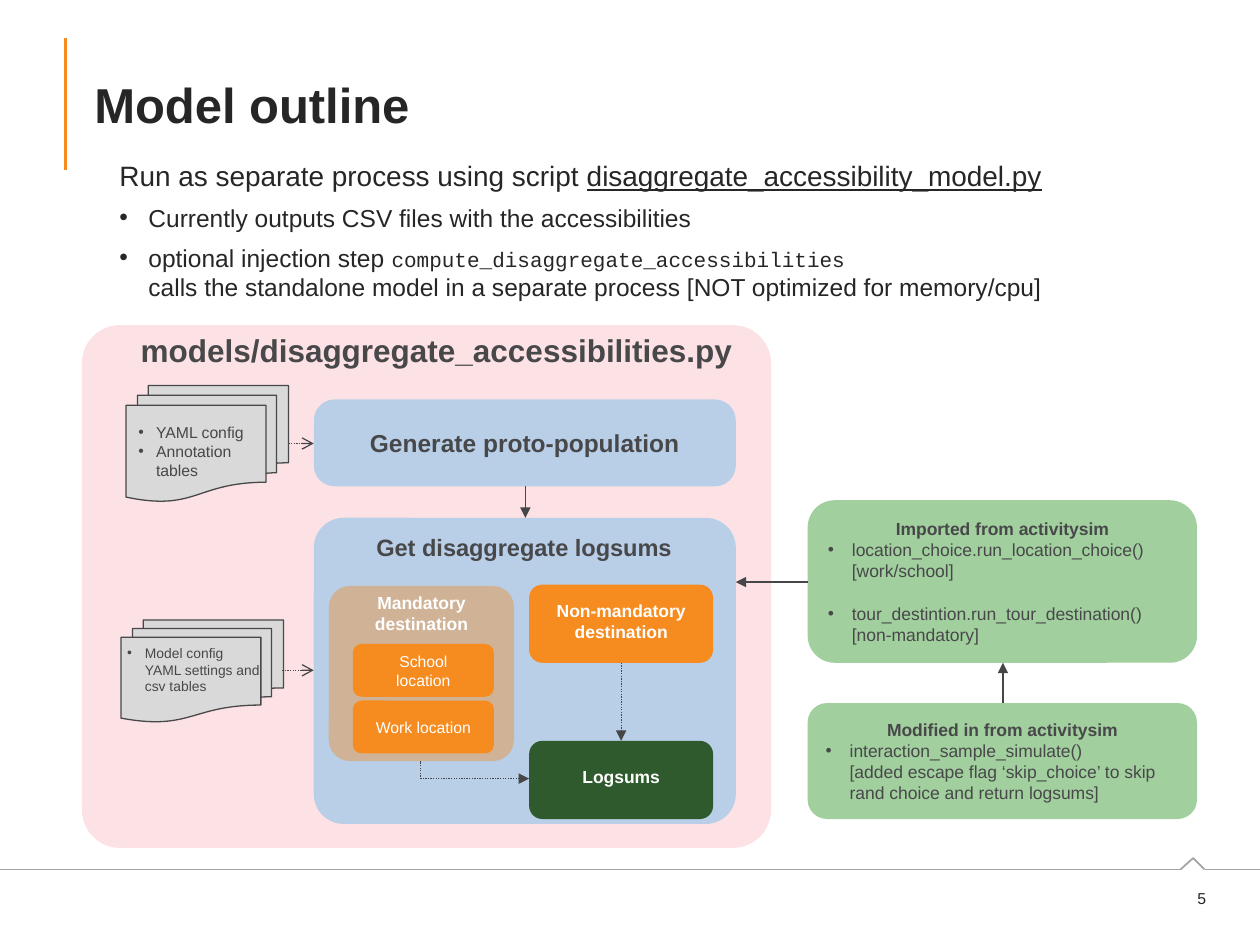
from lxml import etree
from pptx import Presentation, util as u
from pptx.dml.color import RGBColor
from pptx.enum import dml, shapes, text
from pptx.oxml.ns import qn

# The slide is a grid of 100 columns and 75 rows
COLUMNS, ROWS = 100, 75
WIDTH, HEIGHT = u.Inches(10), u.Inches(7.5)

INK, GREY, WHITE = "262626", "48484A", "FFFFFF"
ORANGE, GREEN, DARK_GREEN = "F68B1F", "A1CF9E", "2F5A2D"
PINK, BLUE, PAPER = "FAC7CC", "75BEE9", "D9D9D9"
ARROW, RULE = "464648", "A3A3A5"

SHAPE = shapes.MSO_SHAPE
LEFT, CENTER, RIGHT = (text.PP_ALIGN.LEFT, text.PP_ALIGN.CENTER, text.PP_ALIGN.RIGHT)
TOP, MIDDLE = text.MSO_ANCHOR.TOP, text.MSO_ANCHOR.MIDDLE
SMALL_BOTTOM = (0.1, 0, 0.1, 0.05)


def x(column):
    return round(WIDTH * column / COLUMNS)


def y(row):
    return round(HEIGHT * row / ROWS)


def place(box):
    left, top, width, height = box
    return x(left), y(top), x(width), y(height)


def colour(hex_string):
    return RGBColor.from_string(hex_string)


def run(words, size, ink=GREY, bold=False, underline=False, font="Arial"):
    return words, size, ink, bold, underline, font


def line(*runs, align=LEFT, indent=0, after=0):
    """One paragraph; a positive indent (inches) gives it a bullet."""
    return runs, align, indent, after


def heading(words, size, ink=GREY):
    return line(run(words, size, ink, bold=True), align=CENTER)


def label(words, size, ink=WHITE):
    return line(run(words, size, ink), align=CENTER)


def bullet(words, size, indent):
    return line(run(words, size), indent=indent)


def add_bullet(paragraph, indent):
    properties = paragraph._p.get_or_add_pPr()
    properties.set("marL", str(u.Inches(indent)))
    properties.set("indent", str(-u.Inches(indent)))
    etree.SubElement(properties, qn("a:buFont")).set("typeface", "Arial")
    etree.SubElement(properties, qn("a:buChar")).set("char", "•")


def add_runs(paragraph, runs):
    for words, size, ink, bold, underline, font in runs:
        for number, part in enumerate(words.split("\n")):
            if number:
                paragraph.add_line_break()
                line_break = paragraph._p.findall(qn("a:br"))[-1]
                etree.SubElement(line_break, qn("a:rPr")).set("sz", str(round(size * 100)))
            if part:
                piece = paragraph.add_run()
                piece.text = part
                piece.font.size, piece.font.name = u.Pt(size), font
                piece.font.bold, piece.font.underline = bold, underline
                piece.font.color.rgb = colour(ink)
    end = etree.SubElement(paragraph._p, qn("a:endParaRPr"))
    end.set("sz", str(round(runs[-1][1] * 100)))


def write(shape, lines, anchor=MIDDLE, insets=(0.1, 0.05, 0.1, 0.05)):
    frame = shape.text_frame
    frame.word_wrap, frame.vertical_anchor = True, anchor
    (frame.margin_left, frame.margin_top,
     frame.margin_right, frame.margin_bottom) = map(u.Inches, insets)
    for number, (runs, align, indent, after) in enumerate(lines):
        paragraph = frame.add_paragraph() if number else frame.paragraphs[0]
        paragraph.alignment = align
        if indent:
            add_bullet(paragraph, indent)
        if after:
            paragraph.space_after = u.Pt(after)
        add_runs(paragraph, runs)


def add_text(slide, box, *lines, anchor=TOP):
    write(slide.shapes.add_textbox(*place(box)), lines, anchor)


def add_block(slide, box, fill, *lines, kind=SHAPE.ROUNDED_RECTANGLE, corner=None,
              opacity=100, outline=None, **layout):
    shape = slide.shapes.add_shape(kind, *place(box))
    shape.shadow.inherit = False
    shape.fill.solid()
    shape.fill.fore_color.rgb = colour(fill)
    if opacity < 100:
        fill_colour = shape._element.spPr.find(".//" + qn("a:srgbClr"))
        etree.SubElement(fill_colour, qn("a:alpha")).set("val", str(opacity * 1000))
    if outline:
        shape.line.color.rgb, shape.line.width = colour(outline), u.Pt(0.75)
    else:
        shape.line.fill.background()
    if corner:
        shape.adjustments[0] = corner
    if lines:
        write(shape, lines, **layout)


def add_documents(slide, box, *lines, **layout):
    add_block(slide, box, PAPER, *lines, kind=SHAPE.FLOWCHART_MULTIDOCUMENT,
              outline=GREY, **layout)


def add_line(slide, start, end, ink=ARROW, width=0.75, dotted=False,
             tail=None, head=None, corner=False):
    kind = shapes.MSO_CONNECTOR.ELBOW if corner else shapes.MSO_CONNECTOR.STRAIGHT
    connector = slide.shapes.add_connector(
        kind, x(start[0]), y(start[1]), x(end[0]), y(end[1]))
    connector.line.color.rgb, connector.line.width = colour(ink), u.Pt(width)
    if dotted:
        connector.line.dash_style = dml.MSO_LINE.ROUND_DOT
    properties = connector._element.spPr
    if corner:  # a single bend instead of two
        properties.find(qn("a:prstGeom")).set("prst", "bentConnector2")
    for tag, arrow in (("a:headEnd", head), ("a:tailEnd", tail)):
        if arrow:
            etree.SubElement(connector.line._get_or_add_ln(), qn(tag)).set("type", arrow)
    etree.SubElement(properties, qn("a:effectLst"))


def add_frame(slide):
    add_line(slide, (5.2, 3), (5.2, 13.5), ORANGE, 1.5)
    rule = [(0, 69), (93.7, 69), (94.7, 68.1), (95.6, 69), (100, 69)]
    for start, end in zip(rule, rule[1:]):
        add_line(slide, start, end, RULE, 1)
    add_text(slide, (92.5, 70, 4.2, 2.5), line(run("5", 9, INK), align=RIGHT), anchor=MIDDLE)
    add_text(slide, (6.5, 3, 88.5, 10.5),
             line(run("Model outline", 28, INK, bold=True)), anchor=MIDDLE)


def add_introduction(slide):
    add_text(
        slide, (8.5, 12.1, 85.7, 12.5),
        line(run("Run as separate process using script ", 16, INK),
             run("disaggregate_accessibility_model.py", 16, INK, underline=True), after=6),
        line(run("Currently outputs CSV files with the accessibilities", 14, INK),
             indent=0.23, after=6),
        line(run("optional injection step ", 14, INK),
             run("compute_disaggregate_accessibilities\n", 12, INK, font="Courier New"),
             run("calls the standalone model in a separate process "
                 "[NOT optimized for memory/cpu]", 14, INK), indent=0.23, after=6))


def add_model(slide):
    # Panels
    add_block(slide, (6.5, 25.8, 54.7, 41.5), PINK, corner=0.073, opacity=50)
    add_block(slide, (24.9, 41.1, 33.5, 24.3), BLUE, corner=0.098, opacity=50)
    add_block(slide, (24.9, 31.7, 33.5, 6.9), BLUE, heading("Generate proto-population", 14),
              corner=0.241, opacity=50)
    add_text(slide, (9.6, 25.8, 50.1, 4), heading("models/disaggregate_accessibilities.py", 18))
    add_text(slide, (26.1, 41.8, 31, 3.3), heading("Get disaggregate logsums", 13.5))

    # Input files
    add_documents(slide, (10, 30.6, 12.9, 9.2),
                  bullet("YAML config", 9, 0.14), bullet("Annotation tables", 9, 0.14))
    add_documents(slide, (9.6, 49.2, 12.9, 8.1),
                  bullet("Model config YAML settings and csv tables", 7.9, 0.14),
                  insets=(0.05, 0, 0, 0.13))

    # Destination steps
    add_block(slide, (26.1, 46.5, 14.7, 13.9), ORANGE,
              heading("Mandatory destination", 10, WHITE),
              corner=0.12, opacity=40, anchor=TOP, insets=SMALL_BOTTOM)
    for row, words in ((51.1, ("School", "location")), (55.6, ("Work location",))):
        add_block(slide, (28, row, 11.2, 4.2), ORANGE, *(label(word, 9) for word in words))
    for row, fill, words in ((46.4, ORANGE, "Non-mandatory destination"),
                             (58.8, DARK_GREEN, "Logsums")):
        add_block(slide, (42, row, 14.6, 6.2), fill, heading(words, 10, WHITE),
                  insets=SMALL_BOTTOM)


def add_activitysim(slide):
    add_block(slide, (64.1, 39.7, 30.9, 12.9), GREEN,
              heading("Imported from activitysim", 10),
              bullet("location_choice.run_location_choice() [work/school]\n", 10, 0.19),
              bullet("tour_destintion.run_tour_destination() [non-mandatory]", 10, 0.19))
    add_block(slide, (64.1, 55.8, 30.9, 9.2), GREEN,
              heading("Modified in from activitysim", 10),
              bullet("interaction_sample_simulate()\n[added escape flag ‘skip_choice’ "
                     "to skip rand choice and return logsums]", 10, 0.19))


def add_arrows(slide):
    for start, end in (((41.7, 38.6), (41.7, 41.1)),
                       ((64.1, 46.2), (58.4, 46.2)),
                       ((79.6, 55.8), (79.6, 52.6))):
        add_line(slide, start, end, tail="triangle")
    for start, row in ((22.9, 35.2), (22.4, 53.2)):
        add_line(slide, (start, row), (24.9, row), dotted=True, tail="arrow")
    add_line(slide, (49.3, 52.6), (49.3, 58.8), dotted=True, tail="triangle")
    add_line(slide, (42, 61.8), (33.4, 60.4), dotted=True, head="triangle", corner=True)


def main():
    presentation = Presentation()
    presentation.slide_width, presentation.slide_height = WIDTH, HEIGHT
    slide = presentation.slides.add_slide(presentation.slide_layouts[6])
    for add_part in (add_frame, add_introduction, add_model, add_activitysim, add_arrows):
        add_part(slide)
    presentation.save("out.pptx")


if __name__ == "__main__":
    main()
